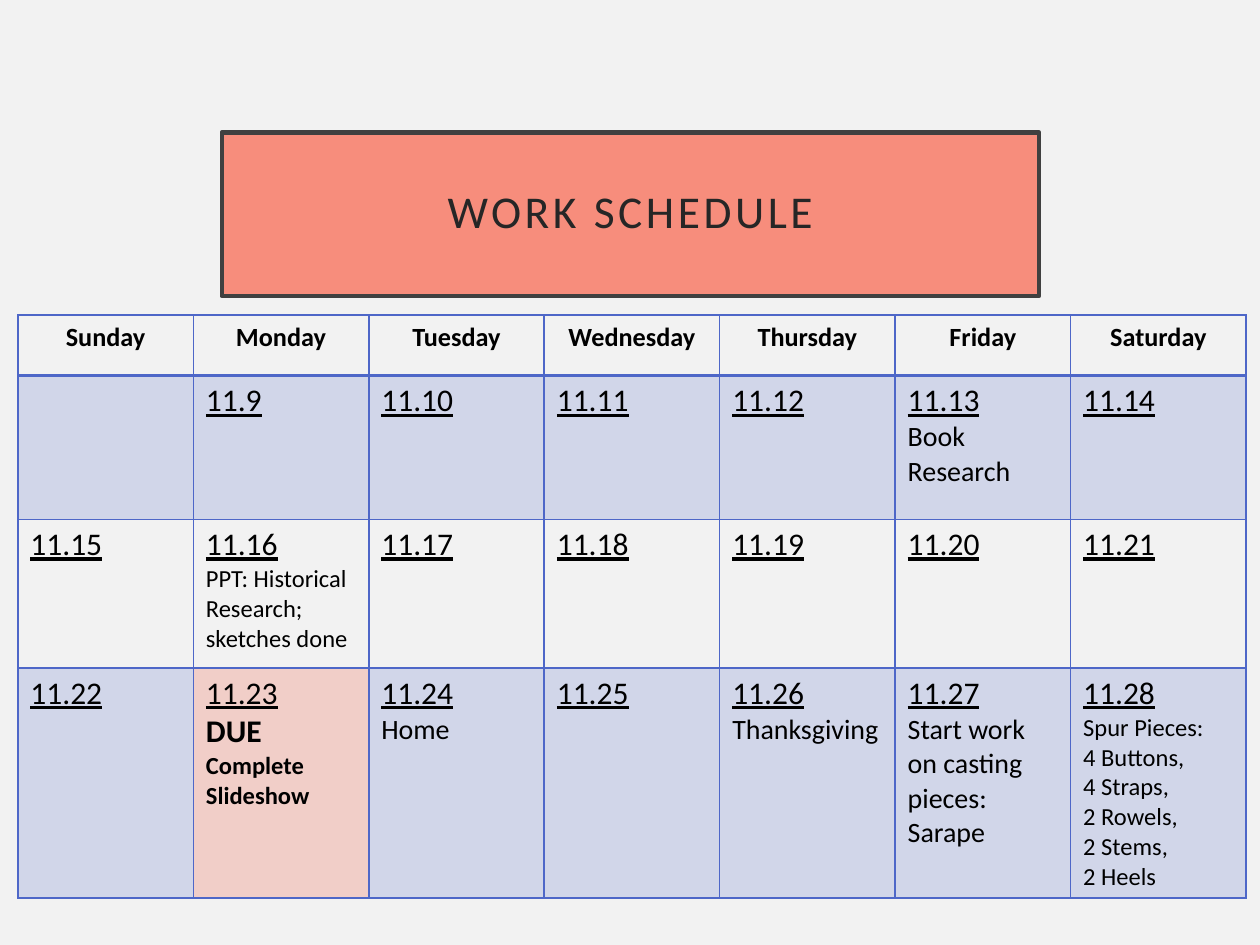
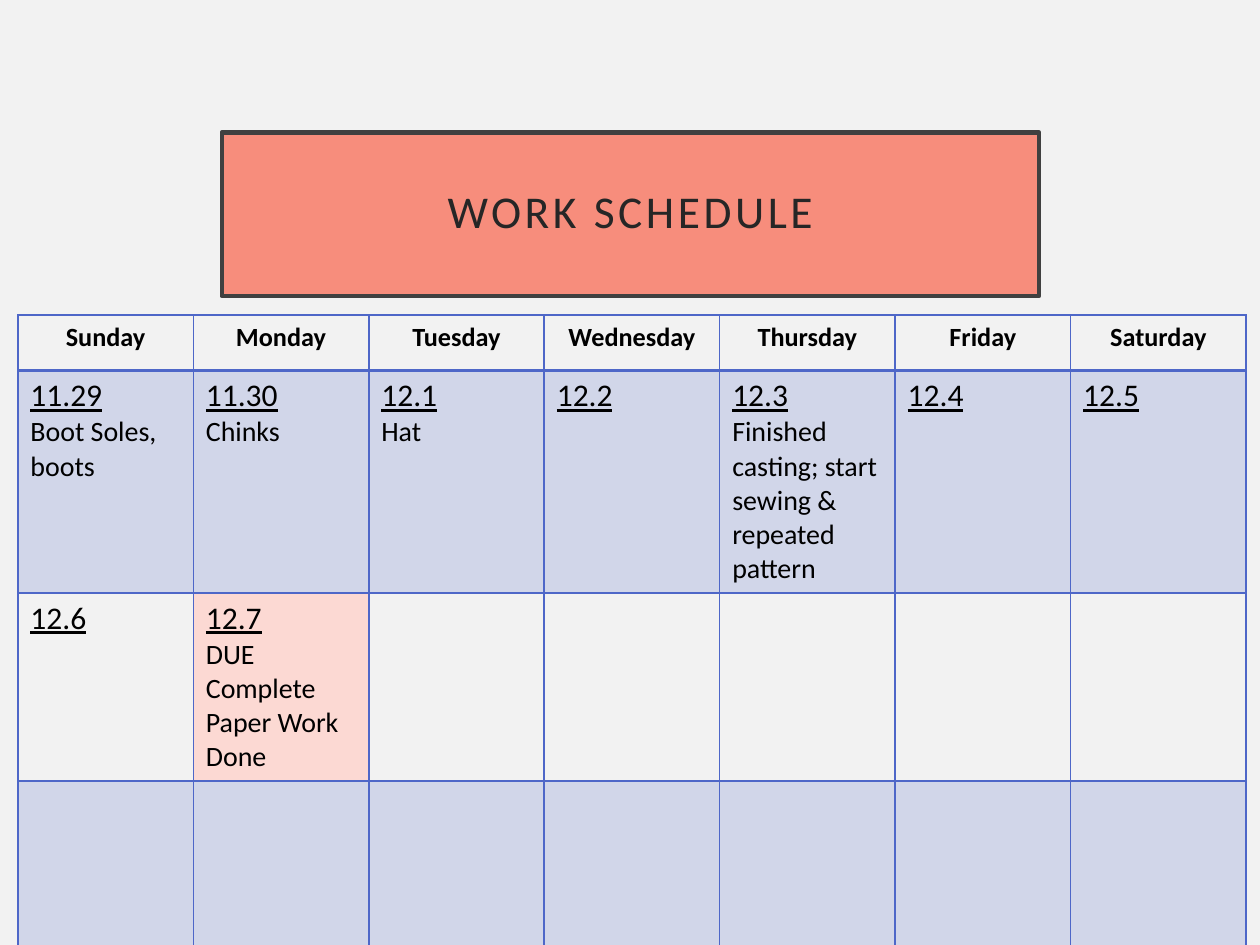
"""Build two work schedule slides, each a titled weekly calendar."""
from lxml.etree import SubElement
from pptx import Presentation
from pptx.dml.color import RGBColor
from pptx.enum.shapes import MSO_SHAPE as Shape
from pptx.enum.text import MSO_ANCHOR as Anchor, PP_ALIGN as Align
from pptx.oxml import parse_xml
from pptx.oxml.ns import nsdecls, qn
from pptx.util import Cm, Pt

COLORS = {
    "background": "F2F2F2",
    "banner": "F78D7C",
    "frame": "404040",
    "title": "262626",
    "text": "000000",
    "grid": "4E67C8",
    "due": "F14124",
    "final due": "FCD9D3",
}
WEEKDAYS = ["Sunday", "Monday", "Tuesday", "Wednesday", "Thursday", "Friday", "Saturday"]
DATES = [f"11.{day}" for day in range(9, 31)] + [f"12.{day}" for day in range(1, 8)]
NOTES = {
    "11.13": [("Book Research", 16, False)],
    "11.16": [("PPT: Historical Research; sketches done", 14, False)],
    "11.23": [("DUE", 18, True), ("Complete Slideshow", 14, True)],
    "11.24": [("Home", 16, False)],
    "11.26": [("Thanksgiving", 16, False)],
    "11.27": [("Start work on casting pieces: Sarape", 16, False)],
    "11.28": [(line, 14, False) for line in (
        "Spur Pieces:", "4 Buttons,", "4 Straps,", "2 Rowels,", "2 Stems,", "2 Heels")],
    "11.29": [("Boot Soles, boots", 16, False)],
    "11.30": [("Chinks", 16, False)],
    "12.1": [("Hat", 16, False)],
    "12.3": [("Finished casting; start sewing & repeated pattern", 16, False)],
    "12.7": [("DUE Complete Paper Work Done", 16, False)],
}
DUE_FILLS = {"11.23": ("due", 20), "12.7": ("final due", 100)}
FIRST_DAYS = [""] + DATES[:20]
LAST_DAYS = DATES[20:] + [""] * 12


class Schedule:
    """Holds the deck, its style and the current page."""

    def __init__(self):
        self.font = "Calibri"
        self.deck = Presentation()
        self.deck.slide_width, self.deck.slide_height = Cm(25.4), Cm(19.05)
        self.page = None

    def color(self, name):
        return RGBColor.from_string(COLORS[name])

    def add_page(self):
        self.page = self.deck.slides.add_slide(self.deck.slide_layouts[6])
        fill = self.page.background.fill
        fill.solid()
        fill.fore_color.rgb = self.color("background")

    def style(self, para, size, color="text", bold=False, underline=False):
        for span in para.runs:
            font = span.font
            font.name, font.size, font.bold = self.font, Pt(size), bold
            font.underline = underline
            font.color.rgb = self.color(color)

    def add_title(self, text):
        box = self.page.shapes.add_shape(
            Shape.RECTANGLE, Cm(4.47), Cm(2.67), Cm(16.48), Cm(3.3))
        box.shadow.inherit = False
        box.fill.solid()
        box.fill.fore_color.rgb = self.color("banner")
        box.line.color.rgb = self.color("frame")
        box.line.width = Pt(2.5)
        frame = box.text_frame
        frame.text = text
        frame.word_wrap = True
        frame.vertical_anchor = Anchor.MIDDLE
        frame.margin_left = frame.margin_right = Cm(0.5)
        frame.margin_top = frame.margin_bottom = Cm(0.5)
        para = frame.paragraphs[0]
        para.alignment, para.line_spacing = Align.CENTER, 0.9
        self.style(para, 26, "title")
        para.runs[0].font._element.set("spc", "200")

    def fill_cell(self, cell, name, opacity):
        cell.fill.solid()
        cell.fill.fore_color.rgb = self.color(name)
        if opacity < 100:
            color = next(cell._tc.tcPr.iter(qn("a:srgbClr")))
            SubElement(color, qn("a:alpha")).set("val", str(opacity * 1000))

    def add_borders(self, cell, top=1, bottom=1):
        widths = {"lnL": 1, "lnR": 1, "lnT": top, "lnB": bottom}
        for position, (side, width) in enumerate(widths.items()):
            cell._tc.get_or_add_tcPr().insert(position, parse_xml(
                f'<a:{side} {nsdecls("a")} w="{Pt(width)}"><a:solidFill>'
                f'<a:srgbClr val="{COLORS["grid"]}"/></a:solidFill></a:{side}>'))

    def write_day(self, cell, date):
        notes = NOTES.get(date, [])
        cell.text = "\n".join([date] + [text for text, _, _ in notes])
        first, *others = cell.text_frame.paragraphs
        self.style(first, 18, underline=True)
        for para, (_, size, bold) in zip(others, notes):
            self.style(para, size, bold=bold)

    def add_calendar(self, days, heights):
        columns = len(WEEKDAYS)
        table = self.page.shapes.add_table(
            len(heights), columns, Cm(0.36), Cm(6.35), Cm(24.76),
            Cm(sum(heights))).table
        table.first_row = table.horz_banding = False
        for row, height in zip(table.rows, heights):
            row.height = Cm(height)
        for column, weekday in enumerate(WEEKDAYS):
            cell = table.cell(0, column)
            cell.text = weekday
            para = cell.text_frame.paragraphs[0]
            para.alignment = Align.CENTER
            self.style(para, 15, bold=True)
            cell.fill.background()
            self.add_borders(cell, bottom=2)
        for index, date in enumerate(days):
            week, column = divmod(index, columns)
            cell = table.cell(week + 1, column)
            self.write_day(cell, date)
            if date in DUE_FILLS:
                self.fill_cell(cell, *DUE_FILLS[date])
            elif week % 2 == 0:
                self.fill_cell(cell, "grid", 20)
            else:
                cell.fill.background()
            self.add_borders(cell, top=2 if week == 0 else 1)


def main():
    schedule = Schedule()
    for days, heights in (
            (FIRST_DAYS, [1.22, 2.9, 3, 4.04]),
            (LAST_DAYS, [1.12, 3.45, 3.45, 3.45])):
        schedule.add_page()
        schedule.add_title("WORK SCHEDULE")
        schedule.add_calendar(days, heights)
    schedule.deck.save("out.pptx")


if __name__ == "__main__":
    main()
